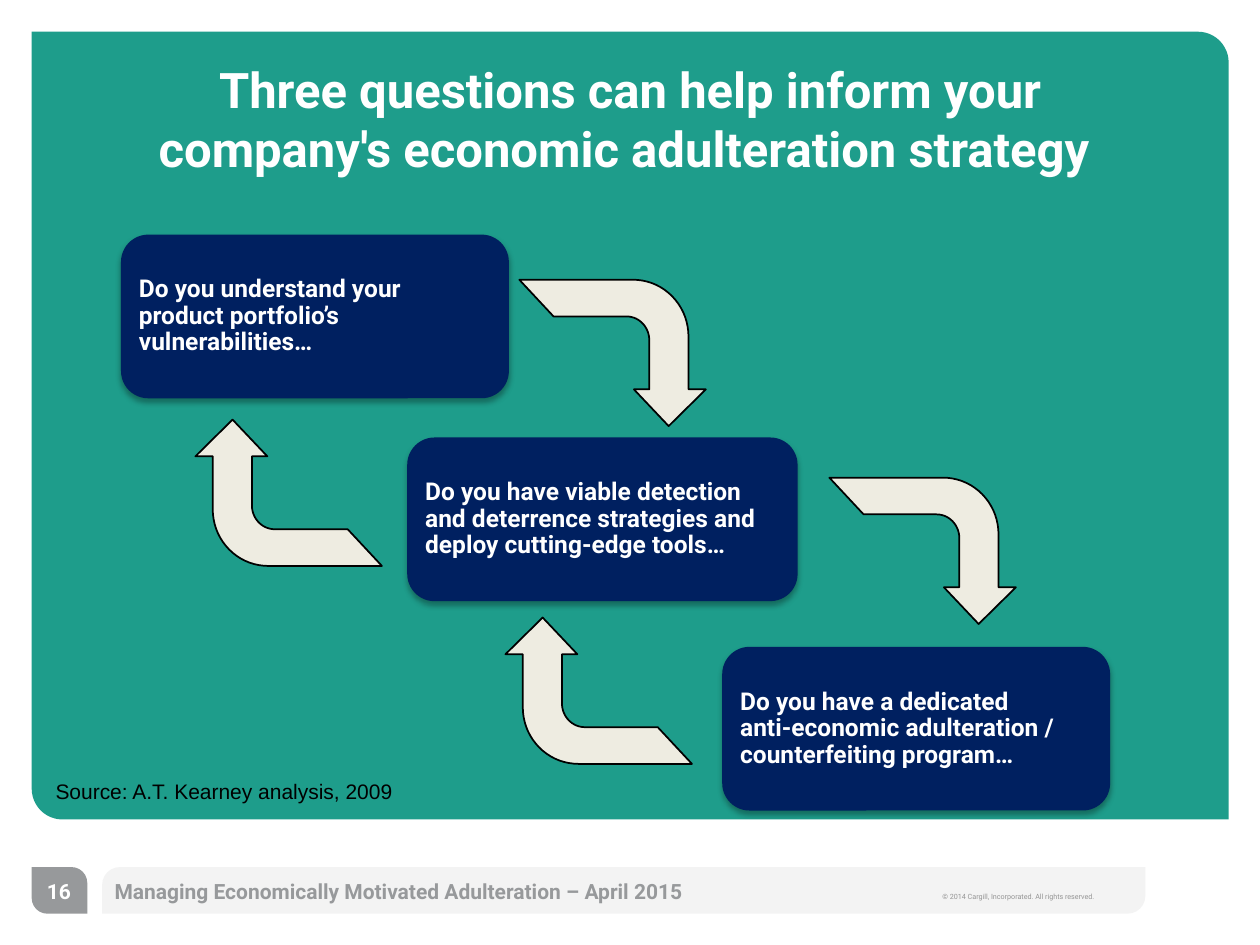
from dataclasses import dataclass
from math import cos, radians, sin

from lxml.etree import SubElement
from pptx import Presentation
from pptx.dml.color import RGBColor
from pptx.enum.shapes import MSO_SHAPE as Preset
from pptx.enum.text import MSO_ANCHOR as Anchor, PP_ALIGN as Align
from pptx.oxml.ns import qn
from pptx.util import Cm, Pt


@dataclass(frozen=True)
class Theme:
    panel: str = "1E9D8B"
    question: str = "002060"
    arrow: str = "EEECE1"
    gray: str = "97999B"
    bar: str = "D0D0D0"
    copyright: str = "959595"
    white: str = "FFFFFF"
    black: str = "000000"
    font: str = "Roboto"
    source_font: str = "Arial"
    title_size: int = 28
    question_size: int = 14
    small_size: int = 12
    copyright_size: int = 7


@dataclass(frozen=True)
class Box:
    left: float
    top: float
    width: float
    height: float

    def inner(self, left, top, width, height):
        return Box(self.left + left, self.top + top, width, height)

    def lengths(self):
        return [Cm(side) for side in (self.left, self.top, self.width, self.height)]


THEME = Theme()


def color(code):
    return RGBColor.from_string(code)


def add_panel(page, box, preset, fill, adjustments=()):
    shape = page.shapes.add_shape(preset, *box.lengths())
    for index, value in enumerate(adjustments):
        shape.adjustments[index] = value
    shape.shadow.inherit = False
    shape.fill.solid()
    shape.fill.fore_color.rgb = color(fill)
    shape.line.fill.background()
    return shape


def set_frame(shape, anchor, inset=None, wrap=True):
    frame = shape.text_frame
    frame.word_wrap = wrap
    frame.vertical_anchor = anchor
    if inset is not None:
        frame.margin_left = frame.margin_right = Cm(inset)
        frame.margin_top = frame.margin_bottom = Cm(inset)
    return frame


def write(frame, lines, size, ink, bold=True, font=THEME.font,
          align=Align.LEFT, spacing=None):
    para = frame.paragraphs[0]
    para.alignment = align
    if spacing:
        para.line_spacing = spacing
    for index, line in enumerate(lines):
        if index:
            para.add_line_break()
        span = para.add_run()
        span.text = line
        span.font.name = font
        span.font.size = Pt(size)
        span.font.bold = bold
        span.font.color.rgb = color(ink)
    return para


def add_text(page, box, text, size, ink, anchor=Anchor.MIDDLE, inset=None,
             wrap=True, **style):
    shape = page.shapes.add_textbox(*box.lengths())
    return write(set_frame(shape, anchor, inset, wrap), [text], size, ink, **style)


def add_alpha(color_element, percent):
    SubElement(color_element, qn("a:alpha"), val=str(percent * 1000))


def add_question(page, box, lines):
    shape = add_panel(page, box, Preset.ROUNDED_RECTANGLE, THEME.question)
    effects = shape._element.spPr.find(qn("a:effectLst"))
    shadow = SubElement(effects, qn("a:outerShdw"), blurRad=str(Pt(3.5)),
                        dist=str(Pt(2.2)), dir="5400000", rotWithShape="0")
    add_alpha(SubElement(shadow, qn("a:srgbClr"), val=THEME.black), 32)
    write(set_frame(shape, Anchor.MIDDLE, 0.2), lines, THEME.question_size,
          THEME.white, spacing=0.9)


def arc(center_x, center_y, radius_x, radius_y, angles):
    return [(center_x + radius_x * cos(radians(angle)),
             center_y - radius_y * sin(radians(angle))) for angle in angles]


def add_bent_arrow(page, box, upward):
    points = [(0, 0)]
    points += arc(2.29, 1.14, 1.12, 1.14, range(90, -1, -5))
    points += [(3.41, 2.21), (3.76, 2.21), (3.01, 2.95), (2.31, 2.21), (2.62, 2.21)]
    points += arc(2.16, 1.22, 0.46, 0.48, range(0, 91, 5))
    points += [(0.69, 0.74)]
    if upward:
        points = [(box.width - x, box.height - y) for x, y in points]
    corners = [(Cm(box.left + x), Cm(box.top + y)) for x, y in points]
    builder = page.shapes.build_freeform(*corners[0])
    builder.add_line_segments(corners[1:], close=True)
    shape = builder.convert_to_shape()
    shape.shadow.inherit = False
    shape.fill.solid()
    shape.fill.fore_color.rgb = color(THEME.arrow)
    shape.line.color.rgb = color(THEME.black)
    shape.line.width = Pt(1)


def add_footer(page, box):
    bar = add_panel(page, box.inner(1.42, 0, 21.03, box.height),
                    Preset.ROUND_2_DIAG_RECTANGLE, THEME.bar, (0.381, 0))
    add_alpha(bar._element.spPr.find(qn("a:solidFill"))[0], 25)
    add_panel(page, box.inner(0, 0, 1.12, box.height),
              Preset.ROUND_2_DIAG_RECTANGLE, THEME.gray, (0, 0.337))
    notice = add_text(page, box.inner(18.11, 0.35, 4.04, 0.56),
                      "© 2014 Cargill, Incorporated. All rights reserved.",
                      THEME.copyright_size, THEME.copyright, anchor=Anchor.TOP,
                      wrap=False, bold=False)
    notice.runs[0]._r.get_or_add_rPr().set("baseline", "30000")
    add_text(page, box.inner(1.42, -0.03, 13.82, 1.02),
             "Managing Economically Motivated Adulteration – April 2015",
             THEME.small_size, THEME.gray)
    add_text(page, box.inner(0.03, -0.03, 1.04, 1.02), "16", THEME.small_size,
             THEME.white, wrap=False, align=Align.CENTER)


def add_questions(page, box):
    add_panel(page, box, Preset.ROUND_2_DIAG_RECTANGLE, THEME.panel, (0, 0.039))
    add_text(page, box.inner(1.75, 0.56, 20.62, 2.39),
             "Three questions can help inform your company's economic "
             "adulteration strategy ",
             THEME.title_size, THEME.white, inset=0, align=Align.CENTER)
    questions = [
        (1.8, 4.09, 7.82, ["Do you understand your product portfolio’s vulnerabilities…"]),
        (7.57, 8.18, 7.87, ["Do you have viable detection and deterrence strategies "
                            "and deploy cutting-edge tools…"]),
        (13.92, 12.4, 7.82, ["Do you have a dedicated ",
                             "anti-economic adulteration /",
                             "counterfeiting program…"]),
    ]
    for left, top, width, lines in questions:
        add_question(page, box.inner(left, top, width, 3.3), lines)
    add_text(page, box.inner(0.48, 14.76, 7.77, 0.81),
             "Source: A.T. Kearney analysis, 2009", THEME.small_size, THEME.black,
             anchor=Anchor.BOTTOM, inset=0, bold=False, font=THEME.source_font,
             spacing=0.85)
    for step in range(2):
        for left, top, upward in ((3.3, 7.82, True), (9.83, 5, False)):
            place = box.inner(left + 6.25 * step, top + 3.99 * step, 3.76, 2.95)
            add_bent_arrow(page, place, upward)


def main():
    deck = Presentation()
    deck.slide_width, deck.slide_height = Cm(25.4), Cm(19.05)
    page = deck.slides.add_slide(deck.slide_layouts[6])
    add_footer(page, Box(0.64, 17.48, 22.45, 0.94))
    add_questions(page, Box(0.64, 0.64, 24.13, 15.88))
    deck.save("out.pptx")


if __name__ == "__main__":
    main()
